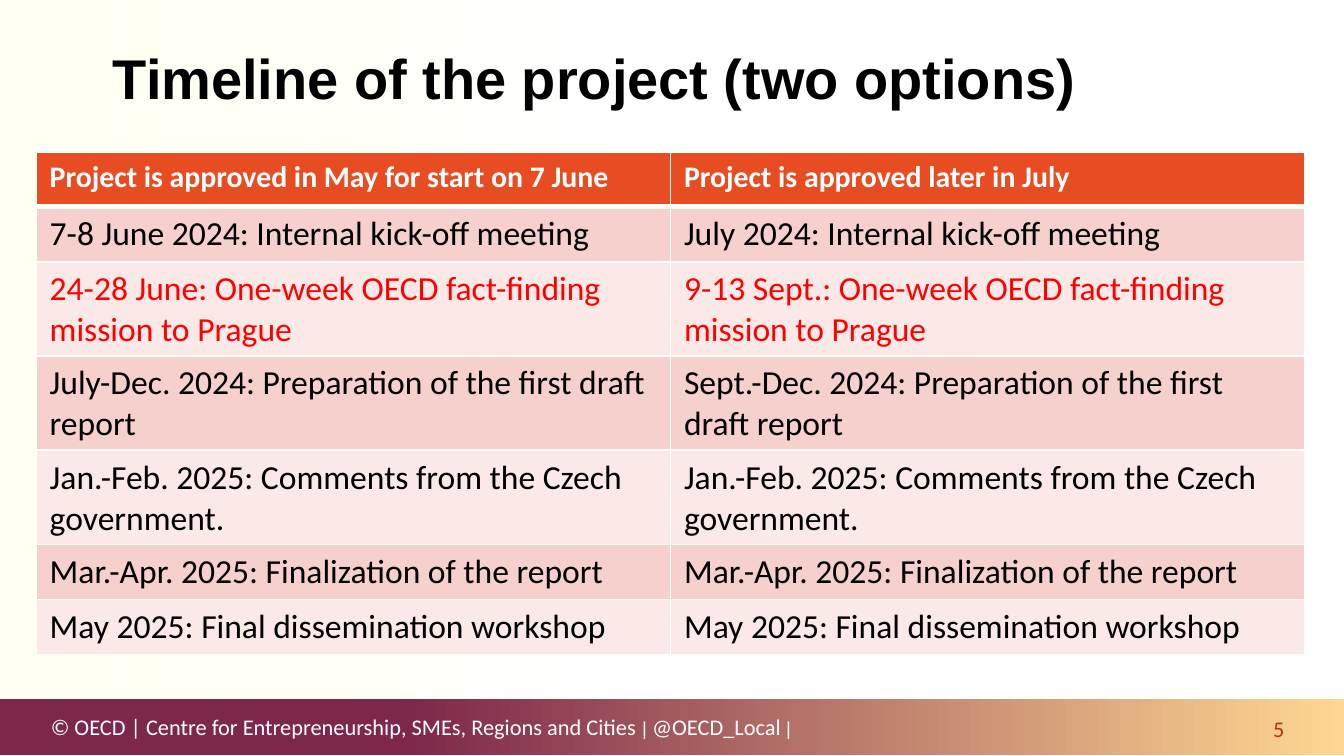
from lxml import etree
from pptx import Presentation
from pptx.dml.color import RGBColor
from pptx.enum import shapes, text
from pptx.oxml.ns import qn
from pptx.util import Inches, Pt

TITLE = "Timeline of the project (two options)"
ROWS = [
    ("Project is approved in May for start on 7 June", "Project is approved later in July"),
    ("7-8 June 2024: Internal kick-off meeting", "July 2024: Internal kick-off meeting"),
    ("24-28 June: One-week OECD fact-finding mission to Prague",
     "9-13 Sept.: One-week OECD fact-finding mission to Prague"),
    ("July-Dec. 2024: Preparation of the first draft report",
     "Sept.-Dec. 2024: Preparation of the first draft report"),
    ("Jan.-Feb. 2025: Comments from the Czech government.",) * 2,
    ("Mar.-Apr. 2025: Finalization of the report",) * 2,
    ("May 2025: Final dissemination workshop",) * 2,
]
MISSION_ROW = 2
FOOTER = [
    ("© OECD | Centre for Entrepreneurship, SMEs, Regions and Cities", "footer"),
    (" | ", "divider"),
    ("@OECD_Local", "footer"),
    (" |", "divider"),
]
PAGE = "5"

THEME = {
    "title": dict(name="Arial", size=30, color="000000", bold=True),
    "header": dict(name="Calibri", size=16, color="FFFFFF", bold=True),
    "body": dict(name="Calibri", size=18, color="000000", bold=False),
    "mission": dict(name="Calibri", size=18, color="FF0000", bold=False),
    "footer": dict(name="Calibri", size=12, color="FFFFFF"),
    "divider": dict(name="Arial", size=10, color="FFFFFF"),
    "page": dict(name="Calibri", size=12, color="B53513"),
    "header_fill": "E84C22",
    "bands": ("F6D0CD", "FBE9E8"),
    "border": "FFFFFF",
    "bar": ((0, "FFD791", 100), (0.7, "7D274A", 100)),
    "glow": ((0, "FFFFFF", 100), (1, "FFFFE7", 50)),
}


def add_run(p, words, style):
    r = p.add_run()
    r.text = words
    for key, value in THEME[style].items():
        if key == "color":
            r.font.color.rgb = RGBColor.from_string(value)
        else:
            setattr(r.font, key, Pt(value) if key == "size" else value)


def add_gradient(s, box, stops):
    sp = s.shapes.add_shape(shapes.MSO_SHAPE.RECTANGLE, *map(Inches, box))
    sp.shadow.inherit = False
    sp.line.fill.background()
    sp.fill.gradient()
    sp.fill.gradient_angle = 180
    for stop, (position, color, opacity) in zip(sp.fill.gradient_stops, stops):
        stop.position = position
        stop.color.rgb = RGBColor.from_string(color)
        if opacity < 100:
            for clr in sp._element.spPr.iter(qn("a:srgbClr")):
                if clr.get("val") == color:
                    etree.SubElement(clr, qn("a:alpha")).set("val", str(opacity * 1000))


def add_label(s, box, runs, **frame):
    tf = s.shapes.add_textbox(*map(Inches, box)).text_frame
    frame = dict(word_wrap=False, vertical_anchor=text.MSO_ANCHOR.MIDDLE) | frame
    for key, value in frame.items():
        setattr(tf, key, value)
    for words, style in runs:
        add_run(tf.paragraphs[0], words, style)
    return tf.paragraphs[0]


def add_title(s):
    sp = s.shapes.title
    box = dict(left=0.74, top=0.15, width=8.98, height=0.87)
    for key, value in box.items():
        setattr(sp, key, Inches(value))
    tf = sp.text_frame
    tf.vertical_anchor = text.MSO_ANCHOR.MIDDLE
    p = tf.paragraphs[0]
    p.alignment = text.PP_ALIGN.LEFT
    p.line_spacing = Pt(34)
    add_run(p, TITLE, "title")
    s.shapes._spTree.append(sp._element)


def add_borders(cell, **widths):
    tcPr = cell._tc.get_or_add_tcPr()
    for side in "LRTB":
        ln = etree.SubElement(tcPr, qn(f"a:ln{side}"), w=str(Pt(widths.get(side, 1))))
        fill = etree.SubElement(ln, qn("a:solidFill"))
        etree.SubElement(fill, qn("a:srgbClr"), val=THEME["border"])


def add_timeline(s):
    row_height = Inches(0.41)
    table = s.shapes.add_table(len(ROWS), len(ROWS[0]), Inches(0.27), Inches(1.13),
                               Inches(9.44), row_height * len(ROWS)).table
    for i, row in enumerate(ROWS):
        table.rows[i].height = row_height
        style = {0: "header", MISSION_ROW: "mission"}.get(i, "body")
        fill = THEME["bands"][(i - 1) % 2] if i else THEME["header_fill"]
        borders = {0: dict(B=3), 1: dict(T=3)}.get(i, {})
        for j, words in enumerate(row):
            cell = table.cell(i, j)
            add_borders(cell, **borders)
            cell.fill.solid()
            cell.fill.fore_color.rgb = RGBColor.from_string(fill)
            add_run(cell.text_frame.paragraphs[0], words, style)


def main():
    prs = Presentation()
    prs.slide_width = Inches(10)
    prs.slide_height = prs.slide_width * 9 // 16
    s = prs.slides.add_slide(prs.slide_layouts[5])
    add_gradient(s, (0, 5.2, 10, 0.42), THEME["bar"])
    add_gradient(s, (0, 0, 4.52, 5.2), THEME["glow"])
    add_label(s, (0.28, 5.31, 5.8, 0.2), FOOTER, margin_right=0)
    add_title(s)
    p = add_label(s, (9.33, 5.32, 0.37, 0.2), [(PAGE, "page")])
    p.alignment = text.PP_ALIGN.CENTER
    add_timeline(s)
    prs.save("out.pptx")


if __name__ == "__main__":
    main()
